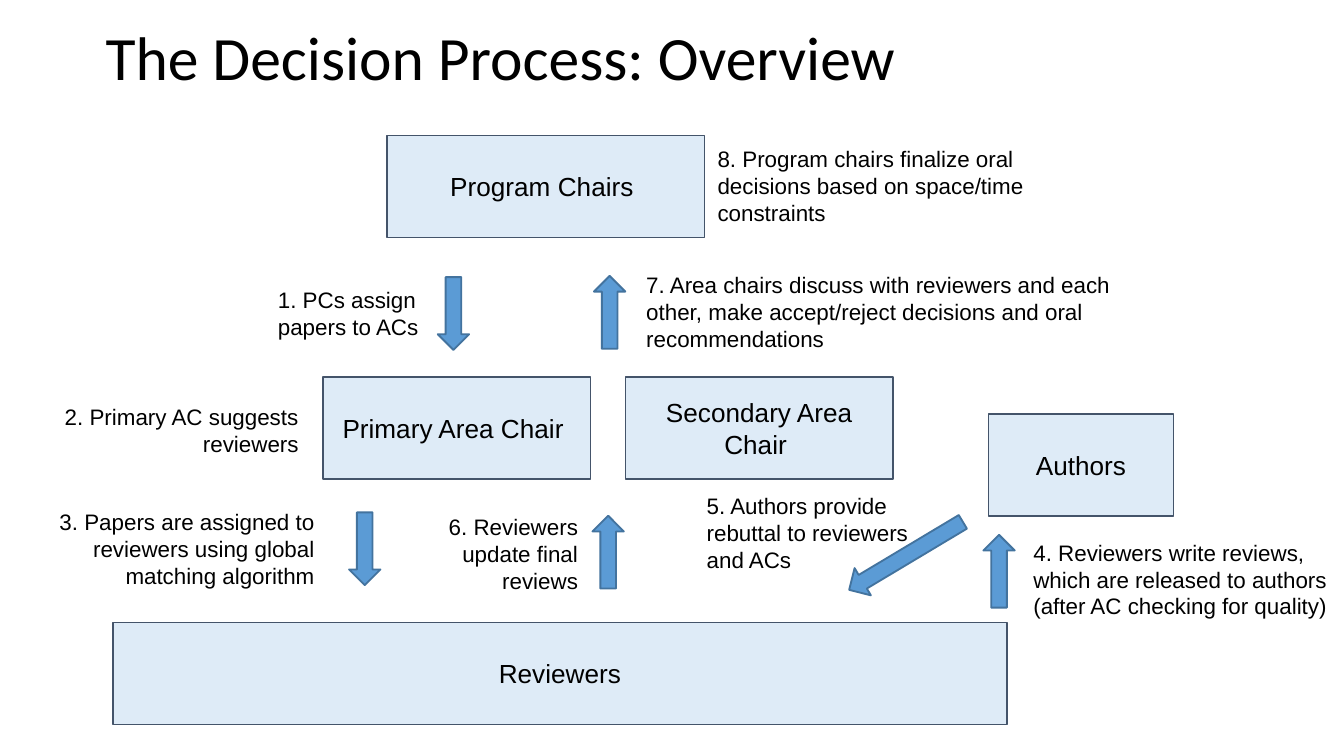
from pptx import Presentation
from pptx.dml.color import RGBColor
from pptx.enum.shapes import MSO_SHAPE
from pptx.enum.text import MSO_ANCHOR, PP_ALIGN
from pptx.util import Pt

BLACK = RGBColor(0x00, 0x00, 0x00)
PALE_BLUE = RGBColor(0xDE, 0xEB, 0xF7)
SLATE = RGBColor(0x44, 0x54, 0x6A)
BLUE = RGBColor(0x5B, 0x9B, 0xD5)
DARK_BLUE = RGBColor(0x43, 0x73, 0x9E)

ROLE_HEIGHT = 54.7
ROLES = [
    ("Reviewers", 60.5, 333.5, 479),
    ("Primary Area Chair ", 173, 202, 143.5),
    ("Secondary Area Chair ", 335, 202, 143.5),
    ("Program Chairs ", 207.3, 72.6, 170),
    ("Authors", 529.6, 221.8, 99),
]
DOWN, UP, DOWN_LEFT = 0, 180, 59.1
ARROWS = [
    (234.5, 148.5, 16.8, 39, DOWN),
    (187, 274.5, 16.8, 39, DOWN),
    (526.8, 286.5, 16.8, 39, UP),
    (317.4, 276.3, 16.8, 39, UP),
    (476.9, 262.3, 17, 71, DOWN_LEFT),
    (318.2, 147.8, 16.8, 39, UP),
]
LEFT, RIGHT = PP_ALIGN.LEFT, PP_ALIGN.RIGHT
STEPS = [
    ("1. PCs assign papers to ACs", 141.8, 149.8, 93, 36, LEFT),
    ("2. Primary AC suggests reviewers", 9.4, 212.4, 157.7, 36, RIGHT),
    ("3. Papers are assigned to reviewers using global matching algorithm",
     -4.3, 268.6, 180, 51, RIGHT),
    ("4. Reviewers write reviews, which are released to authors "
     "(after AC checking for quality)", 546.5, 285.1, 173.5, 51, LEFT),
    ("5. Authors provide rebuttal to reviewers and ACs",
     371.5, 260.3, 144, 51, LEFT),
    ("6. Reviewers update final reviews", 225.4, 271.4, 91.4, 51, RIGHT),
    ("7. Area chairs discuss with reviewers and each other, make "
     "accept/reject decisions and oral recommendations",
     339.1, 141.8, 265.7, 51, LEFT),
    ("8. Program chairs finalize oral decisions based on space/time "
     "constraints", 377.3, 74.2, 222.5, 51, LEFT),
]


class ProcessSlide:
    """Draws the parts of a decision process on one slide."""

    def __init__(self, page):
        self.page = page

    def add_text(self, shape, text, size, align, font="Arial", inset=7.2):
        frame = shape.text_frame
        frame.word_wrap = True
        frame.margin_left = frame.margin_right = Pt(7.2)
        frame.margin_top = frame.margin_bottom = Pt(inset)
        para = frame.paragraphs[0]
        para.alignment = align
        span = para.add_run()
        span.text = text
        span.font.name = font
        span.font.size = Pt(size)
        span.font.color.rgb = BLACK
        return para

    def shape(self, kind, bounds, fill, line, weight):
        shape = self.page.shapes.add_shape(kind, *map(Pt, bounds))
        shape.shadow.inherit = False
        shape.fill.solid()
        shape.fill.fore_color.rgb = fill
        shape.line.color.rgb = line
        shape.line.width = Pt(weight)
        return shape

    def title(self, text, *bounds):
        box = self.page.shapes.add_textbox(*map(Pt, bounds))
        para = self.add_text(box, text, 33, LEFT, "Calibri")
        para.line_spacing = 0.9

    def role(self, text, left, top, width):
        bounds = left, top, width, ROLE_HEIGHT
        box = self.shape(MSO_SHAPE.RECTANGLE, bounds, PALE_BLUE, SLATE, 0.75)
        box.text_frame.vertical_anchor = MSO_ANCHOR.MIDDLE
        self.add_text(box, text, 14, PP_ALIGN.CENTER)

    def arrow(self, left, top, width, height, turn):
        bounds = left, top, width, height
        arrow = self.shape(MSO_SHAPE.DOWN_ARROW, bounds, BLUE, DARK_BLUE, 1)
        arrow.rotation = turn

    def step(self, text, left, top, width, height, align):
        box = self.page.shapes.add_textbox(*map(Pt, (left, top, width, height)))
        self.add_text(box, text, 12, align, inset=3.6)


def main():
    deck = Presentation()
    deck.slide_width, deck.slide_height = Pt(720), Pt(405)
    slide = ProcessSlide(deck.slides.add_slide(deck.slide_layouts[6]))
    slide.title("The Decision Process: Overview", 49.5, 7.2, 620.6, 52)
    for role in ROLES:
        slide.role(*role)
    for arrow in ARROWS:
        slide.arrow(*arrow)
    for step in STEPS:
        slide.step(*step)
    deck.save("out.pptx")


if __name__ == "__main__":
    main()
